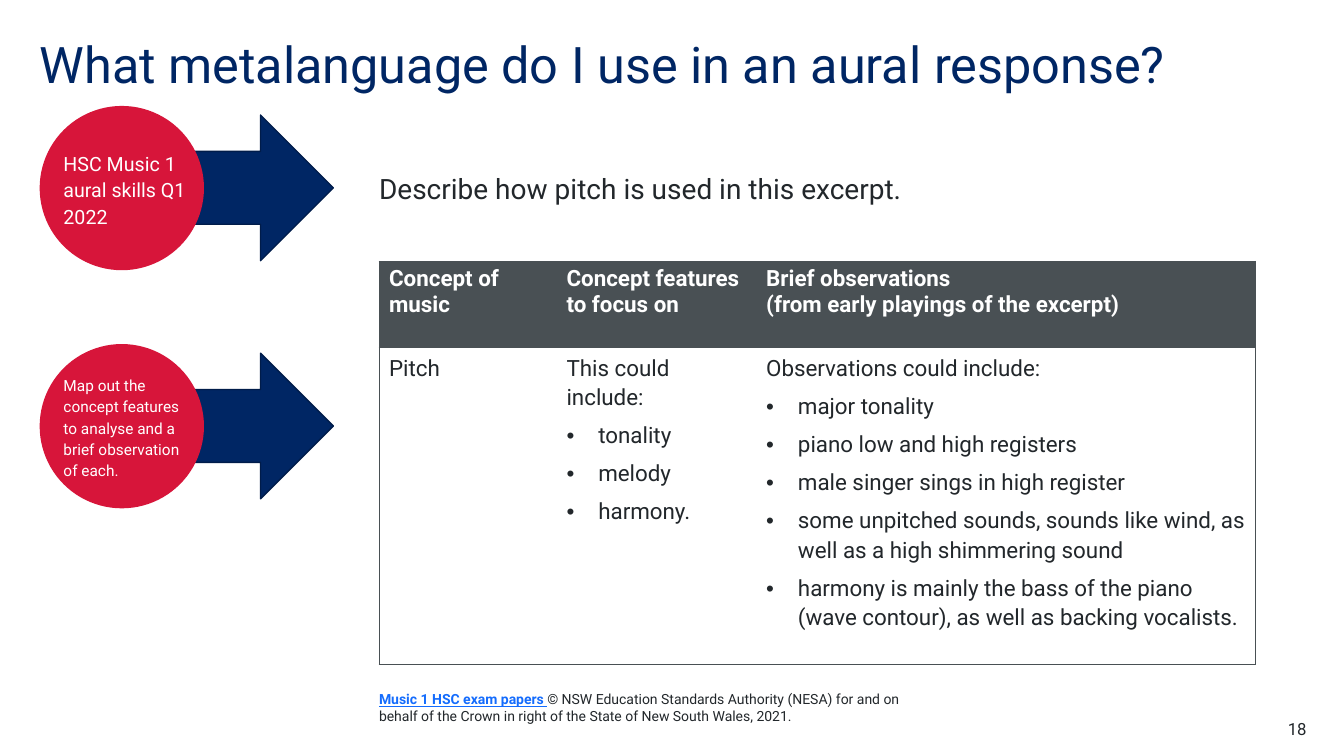
from lxml import etree
from pptx import Presentation
from pptx.dml.color import RGBColor
from pptx.enum.shapes import MSO_SHAPE
from pptx.enum.text import MSO_ANCHOR, PP_ALIGN
from pptx.oxml.ns import qn
from pptx.util import Cm, Pt

ARROW, OVAL = MSO_SHAPE.RIGHT_ARROW, MSO_SHAPE.OVAL
TOP, MIDDLE = MSO_ANCHOR.TOP, MSO_ANCHOR.MIDDLE
LEFT, RIGHT = PP_ALIGN.LEFT, PP_ALIGN.RIGHT

NAVY, DARK_NAVY, RED = "002664", "001C4A", "D7153A"
INK, SLATE, WHITE, LINK_BLUE = "22272B", "495054", "FFFFFF", "146CFD"

STEPS = [
    ("HSC Music 1 aural skills Q1 2022", 14),
    ("Map out the concept features to analyse and a brief observation of each.", 11),
]
STEP_TOP, STEP_PITCH = 2.67, 6
HEADINGS = [
    ["Concept of music"],
    ["Concept features to focus on"],
    ["Brief observations", "(from early playings of the excerpt)"],
]
PITCH_ROW = [
    ["Pitch"],
    ["This could include:", "tonality", "melody", "harmony."],
    [
        "Observations could include:",
        "major tonality",
        "piano low and high registers",
        "male singer sings in high register",
        "some unpitched sounds, sounds like wind, as well as a high shimmering sound",
        "harmony is mainly the bass of the piano (wave contour), as well as backing vocalists.",
    ],
]


def color(hex_code):
    return RGBColor.from_string(hex_code)


class MetalanguageSlide:
    """Draws the slide's elements in one shared style."""

    font_name = "Roboto"

    def __init__(self, prs):
        self.slide = prs.slides.add_slide(prs.slide_layouts[5])
        self.shapes = self.slide.shapes

    def style(self, font, size, hex_code, bold=False):
        font.name, font.size, font.bold = self.font_name, Pt(size), bold
        font.color.rgb = color(hex_code)

    def frame(self, shape, anchor=TOP):
        frame = shape.text_frame
        frame.word_wrap, frame.vertical_anchor = True, anchor
        frame.margin_left = frame.margin_right = 0
        frame.margin_top = frame.margin_bottom = 0
        return frame

    def title(self, wording, left, top, width, height):
        heading = self.shapes.title
        heading.left, heading.top = Cm(left), Cm(top)
        heading.width, heading.height = Cm(width), Cm(height)
        line = self.frame(heading).paragraphs[0]
        line.text, line.alignment, line.line_spacing = wording, LEFT, 0.9
        self.style(line.font, 36, NAVY)

    def text(self, wording, box, size, hex_code=INK, align=LEFT,
             anchor=TOP, spacing=1.0, shapes=None):
        holder = (shapes or self.shapes).add_textbox(*map(Cm, box))
        line = self.frame(holder, anchor).paragraphs[0]
        line.text, line.alignment, line.line_spacing = wording, align, spacing
        self.style(line.font, size, hex_code)

    def solid(self, shapes, kind, box, fill, outline=None):
        solid = shapes.add_shape(kind, *map(Cm, box))
        solid.shadow.inherit = False
        solid.fill.solid()
        solid.fill.fore_color.rgb = color(fill)
        if outline:
            solid.line.color.rgb = color(outline)
            solid.line.width = Pt(1)
        else:
            solid.line.fill.background()

    def step(self, wording, size, top):
        shapes = self.shapes.add_group_shape().shapes
        self.solid(shapes, ARROW, (4.62, top + 0.23, 3.78, 3.67), NAVY, DARK_NAVY)
        self.solid(shapes, OVAL, (1, top, 4.14, 4.14), RED)
        self.text(wording, (1.6, top + 1, 3.25, 2.16), size, WHITE,
                  anchor=MIDDLE, spacing=1.14, shapes=shapes)

    def borders(self, cell, sides):
        properties = cell._tc.get_or_add_tcPr()
        for side in "LRTB":
            edge = etree.SubElement(properties, qn(f"a:ln{side}"), w=str(Pt(0.5)))
            if side in sides:
                fill = etree.SubElement(edge, qn("a:solidFill"))
                etree.SubElement(fill, qn("a:srgbClr"), val=SLATE)
            else:
                etree.SubElement(edge, qn("a:noFill"))

    def bullet(self, paragraph):
        properties = paragraph._p.get_or_add_pPr()
        indent = Cm(0.8)
        properties.set("marL", str(indent))
        properties.set("indent", str(-indent))
        etree.SubElement(properties, qn("a:buFont"), typeface="Arial")
        etree.SubElement(properties, qn("a:buChar"), char="•")

    def cell(self, cell, lines, is_heading, sides):
        self.borders(cell, sides)
        if is_heading:
            cell.fill.solid()
            cell.fill.fore_color.rgb = color(SLATE)
        else:
            cell.fill.background()
        frame = cell.text_frame
        for index, wording in enumerate(lines):
            line = frame.add_paragraph() if index else frame.paragraphs[0]
            line.text = wording
            if not is_heading:
                if index:
                    self.bullet(line)
                line.line_spacing, line.space_after = 1.14, Pt(6)
            self.style(line.font, 16, WHITE if is_heading else INK, is_heading)

    def table(self, rows, left, top, widths, heights):
        box = left, top, sum(widths), sum(heights)
        grid = self.shapes.add_table(len(rows), len(widths), *map(Cm, box)).table
        for column, width in zip(grid.columns, widths):
            column.width = Cm(width)
        for r, (row, height) in enumerate(zip(rows, heights)):
            grid.rows[r].height = Cm(height)
            for c, lines in enumerate(row):
                sides = "TB" + "L" * (c == 0) + "R" * (c == len(row) - 1)
                self.cell(grid.cell(r, c), lines, r == 0, sides)

    def credit(self, source, notice, box):
        holder = self.shapes.add_textbox(*map(Cm, box))
        line = self.frame(holder).paragraphs[0]
        for wording, hex_code, is_source in (
            (source, LINK_BLUE, True), (notice, INK, False)
        ):
            run = line.add_run()
            run.text = wording
            self.style(run.font, 10, hex_code, is_source)
            run.font.underline = is_source


def main():
    prs = Presentation()
    prs.slide_width, prs.slide_height = Cm(33.86), Cm(19.05)
    page = MetalanguageSlide(prs)
    page.title("What metalanguage do I use in an aural response?", 1, 1, 29.9, 1.52)
    for index, (wording, size) in enumerate(STEPS):
        page.step(wording, size, STEP_TOP + index * STEP_PITCH)
    page.text("Describe how pitch is used in this excerpt.", (9.55, 4.32, 22.05, 1.4), 20)
    page.table([HEADINGS, PITCH_ROW], 9.55, 6.58, [4.47, 5.03, 12.57], [2.16, 8])
    page.credit(
        "Music 1 HSC exam papers ",
        "© NSW Education Standards Authority (NESA) for and on behalf of the "
        "Crown in right of the State of New South Wales, 2021.",
        (9.55, 17.4, 13.23, 0.86),
    )
    page.text("18", (30.91, 18.11, 2.01, 0.51), 12, align=RIGHT)
    prs.save("out.pptx")


if __name__ == "__main__":
    main()
